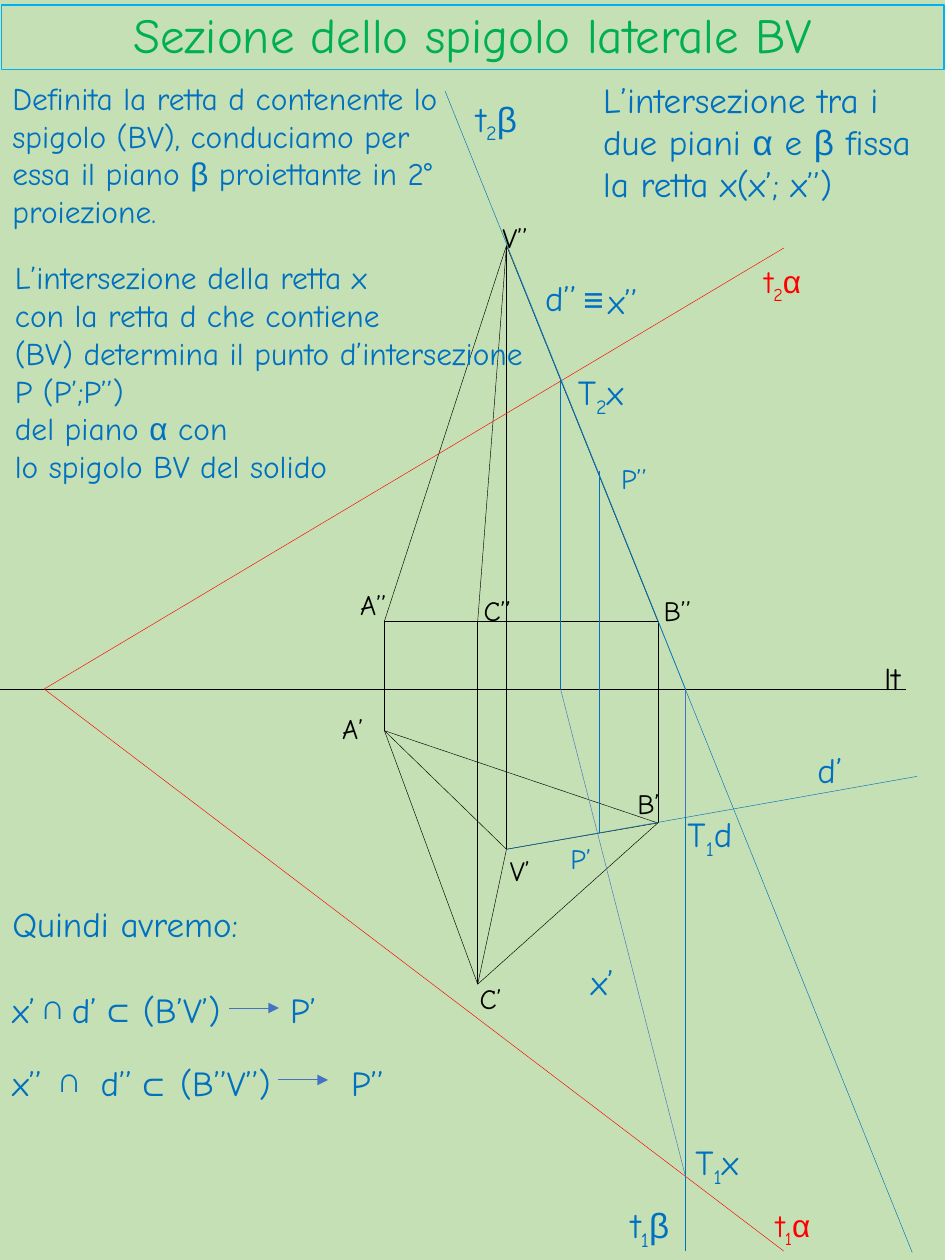
from itertools import groupby

from lxml.etree import SubElement
from pptx import Presentation
from pptx.dml.color import RGBColor
from pptx.enum.shapes import MSO_CONNECTOR, MSO_SHAPE
from pptx.enum.text import MSO_ANCHOR, MSO_AUTO_SIZE, PP_ALIGN
from pptx.oxml.ns import qn
from pptx.util import Cm, Pt

BACKGROUND = RGBColor(0xC5, 0xE0, 0xB4)
BLACK = RGBColor(0, 0, 0)
RED = RGBColor(0xFF, 0, 0)
BLUE = RGBColor(0, 0x70, 0xC0)
INDIGO = RGBColor(0x44, 0x72, 0xC4)
GREEN = RGBColor(0, 0xB0, 0x50)
SKY = RGBColor(0, 0xB0, 0xF0)

TEXT_FONT, SYMBOL_FONT = "Comic Neue", "Arial"
SYMBOLS = "αβ≡⊂∩"
SUBSCRIPTS = {"₁": "1", "₂": "2"}
LINE_HEIGHTS = {16: 0.94, 18: 1.02, 20: 1.12}

# Points of the drawing in cm: 1 is the first projection, 2 the second
GROUND = 13.89
POINTS = {
    "A1": (7.75, 14.73), "B1": (13.26, 16.59), "C1": (9.63, 19.84), "V1": (10.21, 17.12),
    "A2": (7.75, 12.52), "B2": (13.26, 12.52), "C2": (9.63, 12.52), "V2": (10.21, 4.95),
    "ground left": (0, GROUND), "ground right": (18.26, GROUND),
    "alpha": (0.89, GROUND), "t1 alpha": (15.8, 25.22), "t2 alpha": (15.8, 5),
    "beta": (13.82, GROUND), "t1 beta": (13.82, 25.22), "t2 beta": (8.97, 1.83),
    "d2 top": (10.41, 5.44), "d2 bottom": (18.39, 25.25), "d1": (18.49, 15.65),
    "T2x": (11.3, 7.67), "T2x foot": (11.3, GROUND), "T1x": (13.82, 23.72),
    "T1d": (13.82, 16.46), "P1": (12.07, 16.79), "P2": (12.07, 9.5),
}

SOLID_EDGES = [
    ("A1", "B1"), ("A1", "C1"), ("C1", "B1"), ("A1", "V1"), ("B1", "V1"), ("V1", "C1"),
    ("B2", "B1"), ("A2", "A1"), ("C2", "C1"), ("V2", "V1"),
    ("B2", "A2"), ("A2", "V2"), ("B2", "V2"), ("C2", "V2"),
    ("ground right", "ground left"),
]
ALPHA_TRACES = [("alpha", "t2 alpha"), ("alpha", "t1 alpha")]
SECTION_LINES = [
    ("d2 bottom", "d2 top"), ("beta", "t1 beta"), ("T2x", "T2x foot"),
    ("P2", "P1"), ("d1", "V1"), ("beta", "t2 beta"),
]
INDIGO_LINES = [("T2x foot", "T1x"), ("beta", "T1d")]

# Text, left, top, width in cm
VERTEX_LABELS = [
    ("A’", 6.65, 14.22, 1.19), ("C’", 9.42, 19.66, 1.19), ("B’", 12.6, 15.72, 0.99),
    ("A’’", 7.01, 11.71, 1.19), ("C’’", 9.5, 11.84, 1.19), ("B’’", 13.13, 11.84, 1.19),
    ("V’", 10.03, 17.07, 1.19), ("V’’", 9.88, 4.32, 1.19),
]
ALPHA_LABELS = [("t₂α", 15.16, 5.21, 1.57), ("t₁α", 15.39, 24.23, 1.57)]
POINT_LABELS = [("P’", 11.25, 16.84, 1.09), ("P’’", 12.27, 9.17, 1.19)]
SECTION_LABELS = [
    ("t₂β", 9.35, 1.88, 1.6), ("t₁β", 12.47, 24.18, 1.57), ("d’", 16.23, 14.96, 1.09),
    ("d’’", 10.74, 5.44, 1.19), ("≡", 11.51, 5.46, 0.91), ("x’’", 12.01, 5.49, 1.3),
    ("T₂x", 11.4, 7.39, 1.7), ("T₁x", 13.77, 22.92, 1.7), ("T₁d", 13.61, 16.31, 1.7),
    ("x’", 11.66, 19.23, 1.09), ("Quindi avremo:", 0, 18.06, 5.69),
]


def character_kind(character):
    if character in SUBSCRIPTS:
        return "subscript"
    return "symbol" if character in SYMBOLS else "plain"


def add_text(slide, text, left, top, width, height, size, color, wrap=True):
    """Add a text box; Greek and math signs take their own font."""
    box = slide.shapes.add_textbox(Cm(left), Cm(top), Cm(width), Cm(height))
    frame = box.text_frame
    frame.word_wrap = wrap
    frame.auto_size = MSO_AUTO_SIZE.SHAPE_TO_FIT_TEXT
    frame.vertical_anchor = MSO_ANCHOR.MIDDLE
    for index, line in enumerate(text.split("\n")):
        paragraph = frame.add_paragraph() if index else frame.paragraphs[0]
        for kind, characters in groupby(line, key=character_kind):
            run = paragraph.add_run()
            run.text = "".join(SUBSCRIPTS.get(character, character) for character in characters)
            run.font.name = SYMBOL_FONT if kind == "symbol" else TEXT_FONT
            run.font.size = Pt(size)
            run.font.color.rgb = color
            if kind == "subscript":
                run.font._element.set("baseline", "-25000")
    return box


def add_labels(slide, labels, size, color):
    for text, left, top, width in labels:
        add_text(slide, text, left, top, width, LINE_HEIGHTS[size], size, color,
                 wrap=text not in SYMBOLS)


def add_line(slide, start, end, color, width=0.25, arrow=False):
    line = slide.shapes.add_connector(MSO_CONNECTOR.STRAIGHT, *map(Cm, start + end))
    line.line.color.rgb = color
    line.line.width = Pt(width)
    if arrow:
        SubElement(line.line._get_or_add_ln(), qn("a:tailEnd"), type="triangle")
    SubElement(line._element.spPr, qn("a:effectLst"))


def add_lines(slide, pairs, color):
    for start, end in pairs:
        add_line(slide, POINTS[start], POINTS[end], color)


def add_title(slide, text):
    title = slide.shapes.add_shape(MSO_SHAPE.RECTANGLE, Cm(0.03), Cm(0.1), Cm(19), Cm(1.3))
    title.shadow.inherit = False
    title.fill.background()
    title.line.color.rgb = SKY
    title.line.width = Pt(0.75)
    title.text_frame.text = text
    title.text_frame.vertical_anchor = MSO_ANCHOR.MIDDLE
    paragraph = title.text_frame.paragraphs[0]
    paragraph.alignment = PP_ALIGN.CENTER
    paragraph.line_spacing = 0.9
    font = paragraph.runs[0].font
    font.name, font.size, font.color.rgb = TEXT_FONT, Pt(28), GREEN


def add_formula(slide, parts, tabs, top, width, symbols, arrow):
    """Add terms at tab stops, the set signs between them and an arrow."""
    box = add_text(slide, "\t".join(parts), 0, top, width, LINE_HEIGHTS[20], 20, BLUE)
    properties = box.text_frame.paragraphs[0]._p.get_or_add_pPr()
    tab_list = SubElement(properties, qn("a:tabLst"))
    for position in tabs:
        SubElement(tab_list, qn("a:tab"), pos=str(Cm(position)), algn="l")
    for symbol, left, symbol_top in symbols:
        add_text(slide, symbol, left, symbol_top, 0.9, 0.51, 20, BLUE, wrap=False)
    arrow_left, arrow_top = arrow
    add_line(slide, arrow, (arrow_left + 1, arrow_top), INDIGO, 0.5, arrow=True)


def main():
    presentation = Presentation()
    presentation.slide_width, presentation.slide_height = Cm(19.05), Cm(25.4)
    slide = presentation.slides.add_slide(presentation.slide_layouts[6])
    slide.background.fill.solid()
    slide.background.fill.fore_color.rgb = BACKGROUND

    # Projections of the solid, planes and section
    add_lines(slide, SOLID_EDGES, BLACK)
    add_lines(slide, ALPHA_TRACES, RED)
    add_lines(slide, SECTION_LINES, BLUE)
    add_lines(slide, INDIGO_LINES, INDIGO)

    # Labels
    add_labels(slide, VERTEX_LABELS, 16, BLACK)
    add_labels(slide, [("lt", 17.58, 13.16, 1.17)], 18, BLACK)
    add_labels(slide, ALPHA_LABELS, 18, RED)
    add_labels(slide, POINT_LABELS, 16, BLUE)
    add_labels(slide, SECTION_LABELS, 20, BLUE)

    # Title and explanations
    add_title(slide, "Sezione dello spigolo laterale BV")
    add_text(slide, "Definita la retta d contenente lo spigolo (BV), conduciamo per essa "
             "il piano β proiettante in 2° proiezione.", 0, 1.45, 9.4, 3.33, 18, BLUE)
    add_text(slide, "L’intersezione tra i\ndue piani α e β fissa\nla retta x(x’; x’’)",
             11.91, 1.45, 7.11, 2.82, 20, BLUE)
    add_text(slide, "L’intersezione della retta x\ncon la retta d che contiene\n"
             "(BV) determina il punto d’intersezione P (P’;P’’)\n"
             "del piano α con\nlo spigolo BV del solido", 0.05, 5.05, 10.8, 4.88, 18, BLUE)

    # Conclusions
    add_formula(slide, ["x’", "d’", "(B’V’)", "P’"], [1.2, 2.63, 5.6], 19.79, 6.93,
                [("∩", 0.56, 20.02), ("⊂", 1.78, 20.07)], (4.62, 20.32))
    add_formula(slide, ["x’’", "d’’", "(B’’V’’)", "P’’"], [1.78, 3.38, 6.83], 21.26, 8.36,
                [("∩", 0.89, 21.49), ("⊂", 2.49, 21.56)], (5.61, 21.77))

    presentation.save("out.pptx")


if __name__ == "__main__":
    main()
